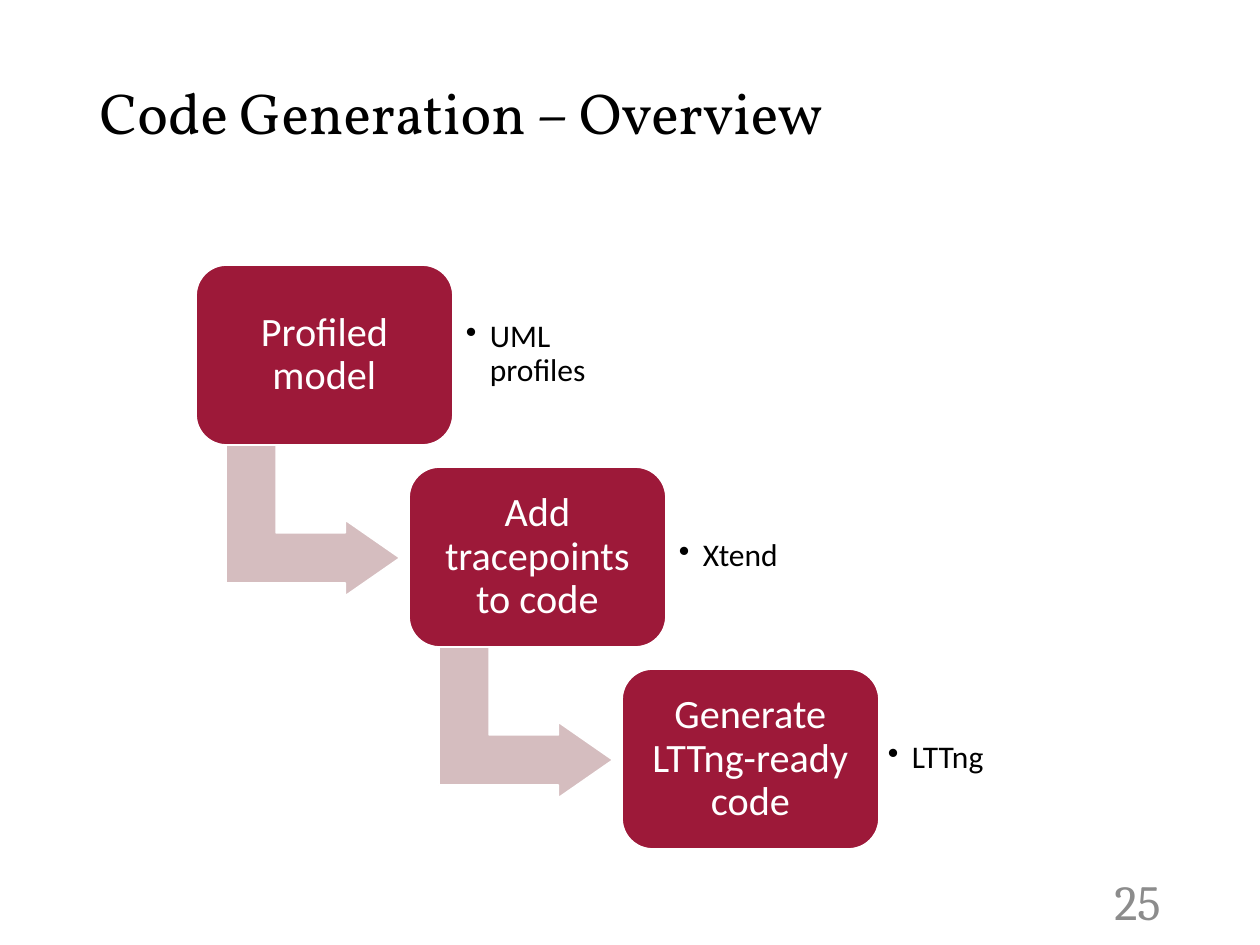
import pptx
import pptx.dml.color
import pptx.enum.shapes
import pptx.enum.text
import pptx.util
from lxml import etree

PX = 914400 / 126
SHAPE = pptx.enum.shapes.MSO_SHAPE
ALIGN = pptx.enum.text.PP_ALIGN
COLORS = {"step": "9D1939", "arrow": "D5BDBF", "white": "FFFFFF",
          "black": "000000", "number": "8C8C8C"}
STEPS = [  # label, detail, inset of the detail
    ("Profiled model", "UML profiles", 13),
    ("Add tracepoints to code", "Xtend", 13),
    ("Generate LTTng-ready code", "LTTng", 9),
]
STEP_W, STEP_H = 257, 180
STEP_DX, STEP_DY = 213, 202


def px(*lengths):
    return [pptx.util.Emu(round(length * PX)) for length in lengths]


def rgb(name):
    return pptx.dml.color.RGBColor.from_string(COLORS[name])


def write(shape, text, size, font, color, align, inset=None, spacing=None):
    frame = shape.text_frame
    frame_format = {"word_wrap": True,
                    "auto_size": pptx.enum.text.MSO_AUTO_SIZE.NONE,
                    "vertical_anchor": pptx.enum.text.MSO_ANCHOR.MIDDLE}
    if inset is not None:
        for side in ("left", "top", "right", "bottom"):
            frame_format[f"margin_{side}"] = px(inset)[0]
    for name, value in frame_format.items():
        setattr(frame, name, value)
    frame.text = text
    paragraph = frame.paragraphs[0]
    paragraph.alignment = align
    if spacing:
        paragraph.line_spacing = spacing
    run_font = paragraph.runs[0].font
    for name, value in {"size": pptx.util.Pt(size), "name": font}.items():
        setattr(run_font, name, value)
    run_font.color.rgb = rgb(color)
    return paragraph


def add_bullet(paragraph, indent):
    properties = paragraph._p.get_or_add_pPr()
    width = px(indent)[0]
    properties.set("marL", str(width))
    properties.set("indent", str(-width))
    bullet = etree.SubElement(properties, pptx.oxml.ns.qn("a:buChar"))
    bullet.set("char", "•")


def add_block(slide, kind, box, fill, adjustments):
    block = slide.shapes.add_shape(kind, *px(*box))
    block.shadow.inherit = False
    block.fill.solid()
    block.fill.fore_color.rgb = rgb(fill)
    block.line.color.rgb = rgb("white")
    block.line.width = pptx.util.Pt(1)
    for index, value in enumerate(adjustments):
        block.adjustments[index] = value
    return block


def add_title(slide, box):
    title = slide.shapes.title
    title.left, title.top, title.width, title.height = px(*box)
    write(title, "Code Generation – Overview", 33, "Vollkorn", "black",
          ALIGN.LEFT, spacing=0.9)


def add_step(slide, left, top, label, detail, detail_inset, leads_on):
    """One step with its detail at the right and, if it leads on, an arrow below."""
    if leads_on:
        arrow = add_block(slide, SHAPE.BENT_UP_ARROW,
                          (left + 41, top + 168, 152, 174),
                          "arrow", (0.33, 0.25, 0.36))
        arrow.rotation = 90
    step = add_block(slide, SHAPE.ROUNDED_RECTANGLE,
                     (left, top, STEP_W, STEP_H), "step", (0.17,))
    write(step, label, 23, "Calibri", "white", ALIGN.CENTER, 13, 0.9)
    note = slide.shapes.add_textbox(*px(left + STEP_W, top + 17, 186, 145))
    paragraph = write(note, detail, 18, "Calibri", "black", ALIGN.LEFT,
                      detail_inset, 0.9)
    add_bullet(paragraph, 24)


def add_staircase(slide, left, top):
    for index, step in enumerate(STEPS):
        add_step(slide, left + index * STEP_DX, top + index * STEP_DY, *step,
                 leads_on=index < len(STEPS) - 1)


def add_page_number(slide, box):
    number = slide.shapes.add_textbox(*px(*box))
    write(number, "25", 28, "Cambria", "number", ALIGN.RIGHT)


def main():
    deck = pptx.Presentation()
    deck.slide_width, deck.slide_height = px(1260, 945)
    slide = deck.slides.add_slide(deck.slide_layouts[5])
    add_title(slide, (87, 40, 1086, 151))
    add_staircase(slide, 196, 265)
    add_page_number(slide, (890, 876, 283, 50))
    deck.save("out.pptx")


if __name__ == "__main__":
    main()
